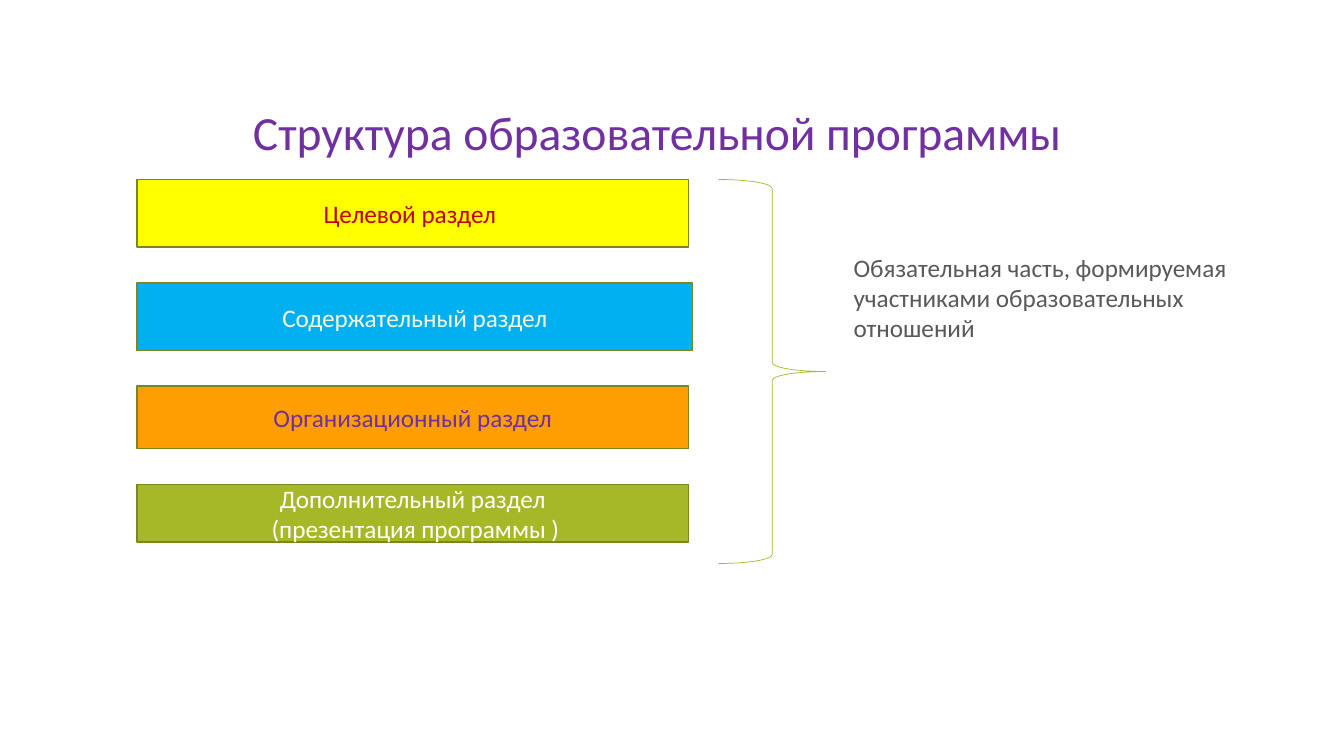
"""Build a slide on the structure of an educational programme."""
from dataclasses import dataclass

from pptx import Presentation
from pptx.dml.color import RGBColor
from pptx.enum.shapes import MSO_SHAPE
from pptx.enum.text import MSO_ANCHOR, MSO_AUTO_SIZE, PP_ALIGN
from pptx.slide import Slide
from pptx.util import Pt

RECTANGLE = MSO_SHAPE.RECTANGLE
RIGHT_BRACE = MSO_SHAPE.RIGHT_BRACE
MIDDLE, BOTTOM, TOP = MSO_ANCHOR.MIDDLE, MSO_ANCHOR.BOTTOM, MSO_ANCHOR.TOP
LEFT, CENTER = PP_ALIGN.LEFT, PP_ALIGN.CENTER
NO_FIT, GROW = MSO_AUTO_SIZE.NONE, MSO_AUTO_SIZE.SHAPE_TO_FIT_TEXT

SECTIONS = [
    (128.2, 393.8, 48.2, "FFFF00", "C00000", ["Целевой раздел "]),
    (202.3, 396.7, 48.2, "00B0F0", "F7F7E2", ["Содержательный раздел"]),
    (275.8, 393.8, 44.6, "FE9E00", "7030A0", ["Организационный раздел"]),
    (346.3, 393.8, 41, "A6B727", "FFFFFF",
     ["Дополнительный раздел", " (презентация программы )"]),
]


def rgb(value):
    """Turn a hex string into a colour."""
    return RGBColor.from_string(value)


@dataclass
class Painter:
    """Hold the style and the current slide."""

    page: Slide
    font: str = "Calibri"
    body_size: float = 18
    border: str = "7B871D"
    accent: str = "A6B727"

    def fill_text(self, box, lines, size, color, align, anchor, fit=NO_FIT):
        """Fill a box with uniformly styled paragraphs."""
        frame = box.text_frame
        frame.text = "\n".join(lines)
        frame.word_wrap = True
        frame.auto_size = fit
        frame.vertical_anchor = anchor
        for para in frame.paragraphs:
            para.alignment = align
            para.font.name = self.font
            para.font.size = Pt(size)
            para.font.color.rgb = rgb(color)

    def title(self, text, left, top, width, height, color):
        """Place and format the title placeholder."""
        box = self.page.shapes.title
        box.left, box.top = Pt(left), Pt(top)
        box.width, box.height = Pt(width), Pt(height)
        self.fill_text(box, [text], 34, color, LEFT, BOTTOM)
        box.text_frame.paragraphs[0].line_spacing = 0.9

    def shape(self, kind, left, top, width, height, line, weight):
        """Add an outlined preset shape without a shadow."""
        box = self.page.shapes.add_shape(
            kind, Pt(left), Pt(top), Pt(width), Pt(height))
        box.shadow.inherit = False
        box.line.color.rgb = rgb(line)
        box.line.width = Pt(weight)
        return box

    def section(self, left, top, width, height, fill, color, lines):
        """Add a filled bar with centred text."""
        box = self.shape(RECTANGLE, left, top, width, height, self.border, 1)
        box.fill.solid()
        box.fill.fore_color.rgb = rgb(fill)
        self.fill_text(box, lines, self.body_size, color, CENTER, MIDDLE)

    def brace(self, left, top, width, height):
        """Add an unfilled right brace."""
        box = self.shape(RIGHT_BRACE, left, top, width, height, self.accent, 0.5)
        box.fill.background()

    def note(self, text, left, top, width, height, color):
        """Add a wrapped text box."""
        box = self.page.shapes.add_textbox(
            Pt(left), Pt(top), Pt(width), Pt(height))
        self.fill_text(box, [text], self.body_size, color, LEFT, TOP, GROW)


def main():
    """Build and save the deck."""
    deck = Presentation()
    deck.slide_width, deck.slide_height = Pt(960), Pt(540)
    painter = Painter(deck.slides.add_slide(deck.slide_layouts[5]))
    painter.title("Структура образовательной программы",
                  173.5, 23.8, 738, 94.3, "7030A0")
    for top, width, height, fill, color, lines in SECTIONS:
        painter.section(97.9, top, width, height, fill, color, lines)
    painter.brace(513.4, 128.2, 76.3, 274.3)
    painter.note("Обязательная часть, формируемая участниками "
                 "образовательных отношений", 602.6, 176.4, 330.5, 72.7, "595959")
    deck.save("out.pptx")


if __name__ == "__main__":
    main()
